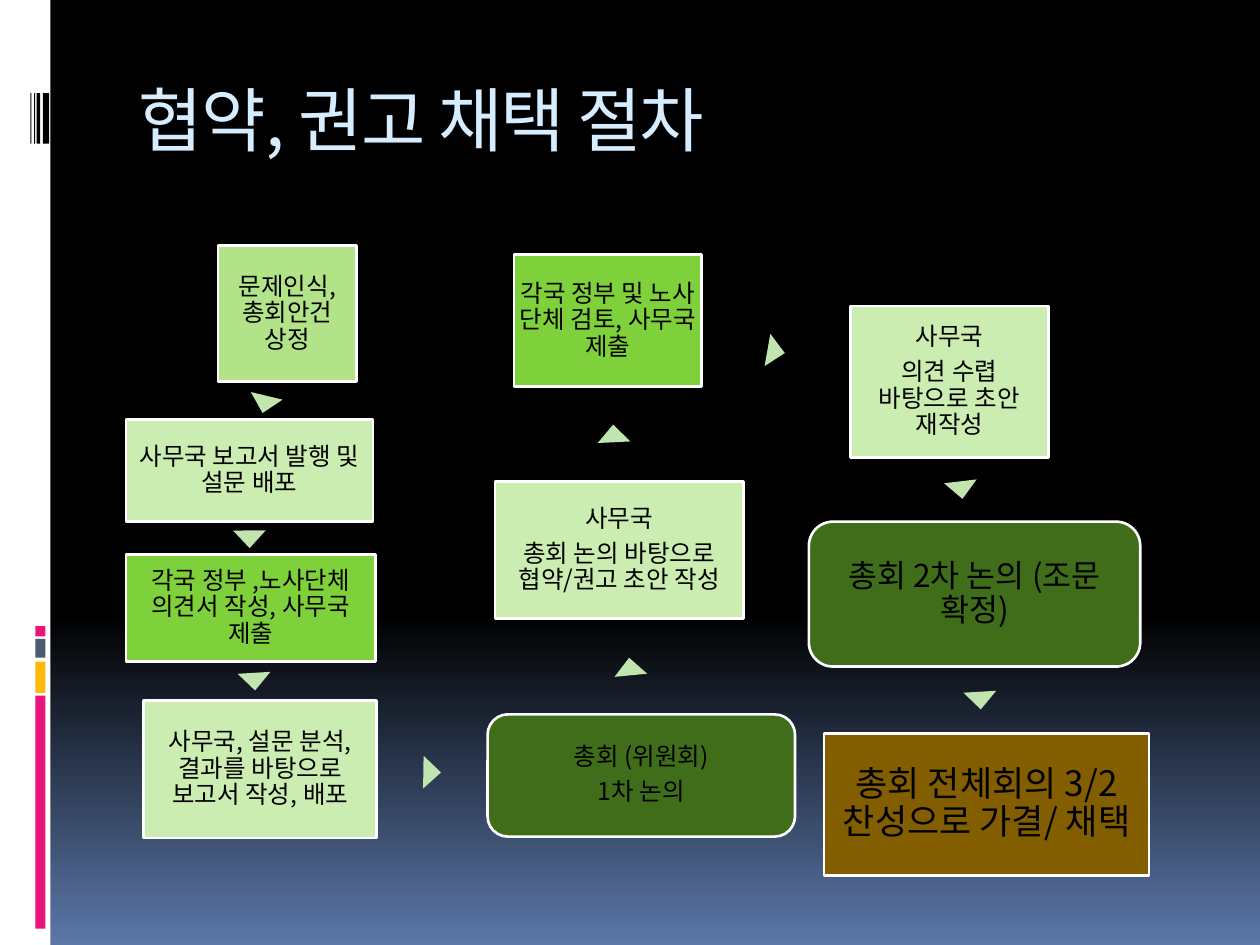
import math

import pptx
import pptx.dml.color
import pptx.enum.shapes
import pptx.enum.text
import pptx.oxml.ns
import pptx.util
from lxml import etree

Inches = pptx.util.Inches
Pt = pptx.util.Pt
RGBColor = pptx.dml.color.RGBColor
ShapeType = pptx.enum.shapes.MSO_SHAPE
Align = pptx.enum.text.PP_ALIGN
Anchor = pptx.enum.text.MSO_ANCHOR
AutoSize = pptx.enum.text.MSO_AUTO_SIZE

FONT = "Noto Sans CJK KR"
BLACK = RGBColor(0x00, 0x00, 0x00)
WHITE = RGBColor(0xFF, 0xFF, 0xFF)
DUSK_BLUE = RGBColor(0x5B, 0x77, 0xA8)
TITLE_BLUE = RGBColor(0xD6, 0xEC, 0xFF)
PINK = RGBColor(0xEA, 0x15, 0x7A)
YELLOW = RGBColor(0xFE, 0xB8, 0x0A)
SLATE = RGBColor(0x4E, 0x5B, 0x6F)
PALE_GREEN = RGBColor(0xCC, 0xED, 0xB1)
SOFT_GREEN = RGBColor(0xB2, 0xE3, 0x89)
BRIGHT_GREEN = RGBColor(0x7F, 0xD1, 0x3B)
DARK_GREEN = RGBColor(0x3F, 0x6D, 0x19)
ARROW_GREEN = RGBColor(0xC0, 0xE5, 0xAF)
BROWN = RGBColor(0x83, 0x5E, 0x01)

TITLE = "협약, 권고 채택 절차"
TITLE_BOX = (1, 0.56, 8.5, 1)

SIDE_BARS = [
    ((0, 0, 0.4, 7.5), WHITE),
    ((0.28, 5.52, 0.08, 1.85), PINK),
    ((0.28, 5.25, 0.08, 0.25), YELLOW),
    ((0.28, 5.07, 0.08, 0.15), SLATE),
    ((0.28, 4.97, 0.08, 0.08), PINK),
    ((0.34, 0.74, 0.05, 0.4), BLACK),
    ((0.29, 0.74, 0.03, 0.4), BLACK),
    ((0.27, 0.74, 0.01, 0.4), BLACK),
    ((0.24, 0.74, 0.01, 0.4), BLACK),
]

RECTANGLE = ShapeType.RECTANGLE
ROUNDED = ShapeType.ROUNDED_RECTANGLE
STEPS = [
    ((1.73, 1.95, 1.1, 1.08), RECTANGLE, SOFT_GREEN, 14, ["문제인식, 총회안건 상정"]),
    ((1, 3.33, 1.96, 0.81), RECTANGLE, PALE_GREEN, 14, ["사무국 보고서 발행 및 설문 배포"]),
    ((1, 4.4, 1.98, 0.85), RECTANGLE, BRIGHT_GREEN, 14,
     ["각국 정부 ,노사단체 의견서 작성, 사무국 제출"]),
    ((1.14, 5.56, 1.85, 1.09), RECTANGLE, PALE_GREEN, 14,
     ["사무국, 설문 분석, 결과를 바탕으로 보고서 작성, 배포"]),
    ((3.87, 5.67, 2.44, 0.97), ROUNDED, DARK_GREEN, 14, ["총회 (위원회)", "1차 논의"]),
    ((3.93, 3.82, 1.97, 1.09), RECTANGLE, PALE_GREEN, 14,
     ["사무국", "총회 논의 바탕으로 협약/권고 초안 작성"]),
    ((4.08, 2.02, 1.49, 1.05), RECTANGLE, BRIGHT_GREEN, 14,
     ["각국 정부 및 노사 단체 검토, 사무국 제출"]),
    ((6.75, 2.43, 1.57, 1.2), RECTANGLE, PALE_GREEN, 14,
     ["사무국", "의견 수렵 바탕으로 초안 재작성"]),
    ((6.42, 4.14, 2.63, 1.15), ROUNDED, DARK_GREEN, 18, ["총회 2차 논의 (조문 확정)"]),
    ((6.54, 5.82, 2.58, 1.13), RECTANGLE, BROWN, 20, ["총회 전체회의 3/2 찬성으로 가결/ 채택"]),
]

ARROW_SIZE = (0.26, 0.14)
ARROW_CORNERS = [
    (1.97, 3.14), (1.85, 4.21), (1.89, 5.34), (3.3, 6.06), (4.87, 5.22),
    (4.74, 3.37), (6.03, 2.72), (7.5, 3.82), (7.65, 5.49),
]


def apply_format(target, values):
    for name, value in values.items():
        setattr(target, name, value)


def add_block(slide, kind, box, color, outlined=False):
    shape = slide.shapes.add_shape(kind, *map(Inches, box))
    shape.shadow.inherit = False
    shape.fill.solid()
    shape.fill.fore_color.rgb = color
    if outlined:
        shape.line.color.rgb = WHITE
        shape.line.width = Pt(1.5)
    else:
        shape.line.fill.background()
    return shape


def write_paragraph(paragraph, text, size, color, paragraph_format):
    apply_format(paragraph, paragraph_format)
    run = paragraph.add_run()
    run.text = text
    apply_format(run.font, {"name": FONT, "size": Pt(size), "bold": False})
    run.font.color.rgb = color
    properties = run.font._element
    east_asian = etree.SubElement(properties, pptx.oxml.ns.qn("a:ea"))
    east_asian.set("typeface", FONT)
    return properties


def add_title(slide):
    title = slide.shapes.title
    apply_format(title, dict(zip(("left", "top", "width", "height"), map(Inches, TITLE_BOX))))
    frame = title.text_frame
    apply_format(frame, {
        "vertical_anchor": Anchor.TOP, "word_wrap": True, "auto_size": AutoSize.NONE,
    })
    properties = write_paragraph(frame.paragraphs[0], TITLE, 40, TITLE_BLUE, {
        "alignment": Align.LEFT, "line_spacing": 1.0, "space_before": Pt(0),
    })
    properties.set("spc", "-100")


def add_step(slide, box, kind, color, size, texts):
    frame = add_block(slide, kind, box, color, outlined=True).text_frame
    inset = Inches(0.03)
    apply_format(frame, {
        "margin_left": inset, "margin_right": inset, "margin_top": inset,
        "margin_bottom": inset, "word_wrap": True, "vertical_anchor": Anchor.MIDDLE,
    })
    for index, text in enumerate(texts):
        paragraph = frame.add_paragraph() if index else frame.paragraphs[0]
        write_paragraph(paragraph, text, size, BLACK, {
            "alignment": Align.CENTER, "line_spacing": 0.9, "space_after": Pt(size * 0.35),
        })


def center(box):
    left, top, width, height = box
    return left + width / 2, top + height / 2


def add_arrow(slide, corner, source_box, target_box):
    source_x, source_y = center(source_box)
    target_x, target_y = center(target_box)
    arrow = add_block(slide, ShapeType.ISOSCELES_TRIANGLE, corner + ARROW_SIZE, ARROW_GREEN)
    heading = math.degrees(math.atan2(target_x - source_x, source_y - target_y))
    arrow.rotation = round(heading % 360, 1)


def set_background(slide):
    fill = slide.background.fill
    fill.gradient()
    fill.gradient_angle = 270
    for stop, position, color in zip(fill.gradient_stops, (0.65, 1), (BLACK, DUSK_BLUE)):
        stop.position = position
        stop.color.rgb = color


def main():
    presentation = pptx.Presentation()
    apply_format(presentation, {"slide_width": Inches(10), "slide_height": Inches(7.5)})
    slide = presentation.slides.add_slide(presentation.slide_layouts[5])
    set_background(slide)
    for box, color in SIDE_BARS:
        add_block(slide, RECTANGLE, box, color)
    add_title(slide)
    for step in STEPS:
        add_step(slide, *step)
    for corner, source, target in zip(ARROW_CORNERS, STEPS, STEPS[1:]):
        add_arrow(slide, corner, source[0], target[0])
    presentation.save("out.pptx")


if __name__ == "__main__":
    main()
